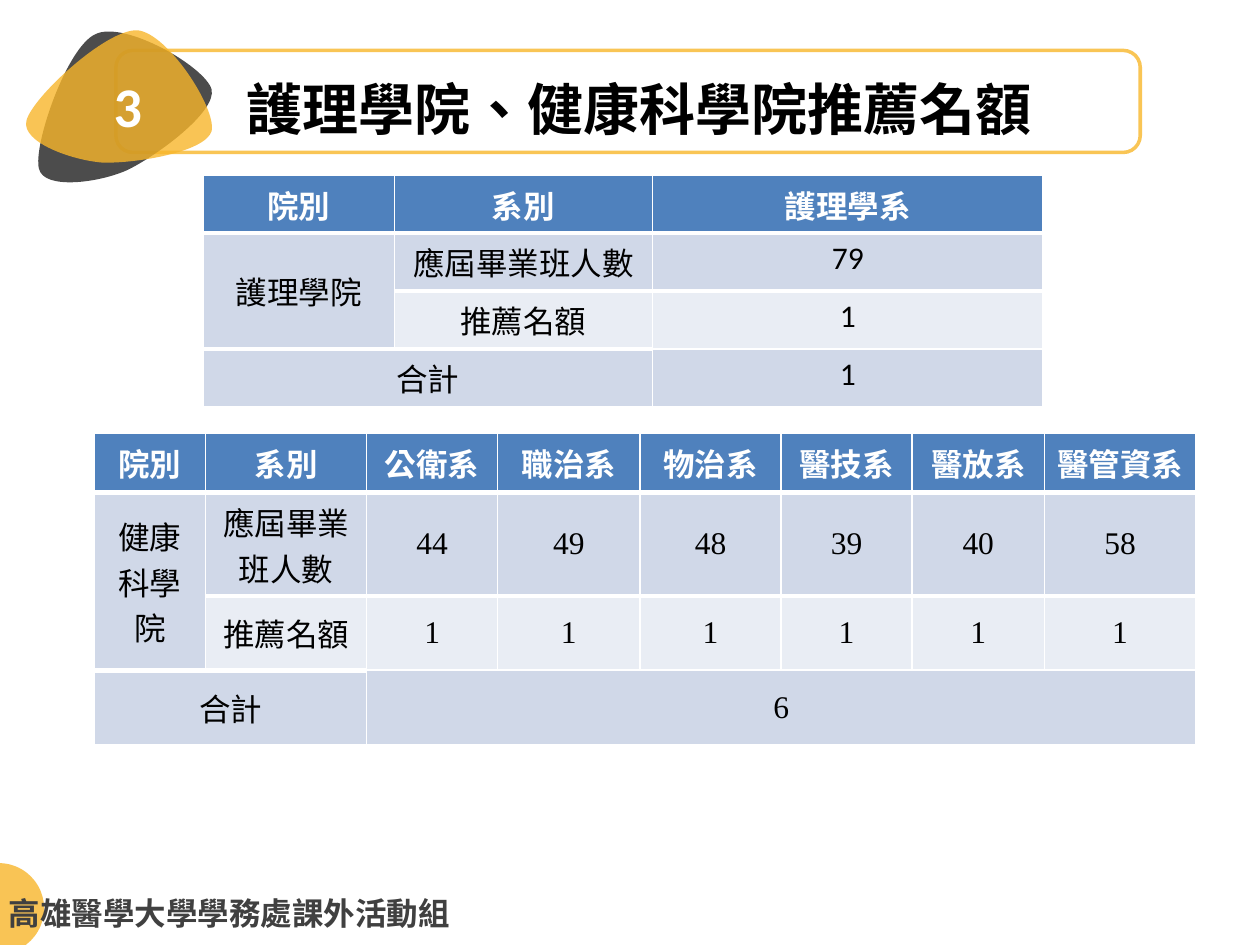
"""Build the slide on recommendation quotas for two colleges."""
from lxml import etree
from pptx import Presentation
from pptx.dml.color import RGBColor
from pptx.enum.shapes import MSO_SHAPE
from pptx.enum.text import MSO_ANCHOR, MSO_AUTO_SIZE, PP_ALIGN
from pptx.oxml import parse_xml
from pptx.oxml.ns import nsdecls, qn
from pptx.util import Inches, Pt

CENTER, LEFT = PP_ALIGN.CENTER, PP_ALIGN.LEFT
TOP, MIDDLE = MSO_ANCHOR.TOP, MSO_ANCHOR.MIDDLE
NO_FIT = MSO_AUTO_SIZE.NONE
OVAL, ROUNDED = MSO_SHAPE.OVAL, MSO_SHAPE.ROUNDED_RECTANGLE
CJK = "Noto Sans CJK SC"
AMBER = "F8B62B"
rgb = RGBColor.from_string


def write(tf, text, font, size, color, bold, align):
    tf.text = text
    p = tf.paragraphs[0]
    p.alignment = align
    p.space_before = Pt(0)
    p.font.name = font
    p.font.size = Pt(size)
    p.font.bold = bold
    p.font.color.rgb = rgb(color)
    props = p._p.pPr.find(qn("a:defRPr"))
    etree.SubElement(props, qn("a:ea")).set("typeface", font)
    run_props = p.runs[0]._r.get_or_add_rPr()
    run_props.set("lang", "zh-TW")
    run_props.set("altLang", "en-US")


def paint(s, color, opacity):
    s.shadow.inherit = False
    s.line.fill.background()
    s.fill.solid()
    s.fill.fore_color.rgb = rgb(color)
    clr = s.fill._xPr.find(".//" + qn("a:srgbClr"))
    etree.SubElement(clr, qn("a:alpha")).set("val", str(opacity * 1000))


prs = Presentation()
prs.slide_width, prs.slide_height = Inches(10), Inches(7.5)
slide = prs.slides.add_slide(prs.slide_layouts[5])
shapes = slide.shapes

frame = shapes.add_shape(ROUNDED, Inches(0.92), Inches(0.4), Inches(8.13), Inches(0.81))
frame.shadow.inherit = False
frame.fill.background()
frame.line.color.rgb = rgb("F9C555")
frame.line.width = Pt(2)

dot = shapes.add_shape(OVAL, Inches(-0.37), Inches(6.85), Inches(0.72), Inches(0.72))
paint(dot, AMBER, 80)

blobs = [
    ("000000", 70, (1.01, 1.35), [
        (1.24, 1.24, 1.72, 0.89, 1.68, 0.71), (1.63, 0.53, 0.99, 0.16, 0.76, 0.27),
        (0.53, 0.37, 0.26, 1.16, 0.31, 1.34), (0.35, 1.51, 0.79, 1.45, 1.01, 1.35)]),
    (AMBER, 80, (0.81, 1.29), [
        (1.06, 1.3, 1.63, 1.21, 1.68, 1.04), (1.72, 0.86, 1.33, 0.26, 1.09, 0.24),
        (0.84, 0.23, 0.25, 0.78, 0.21, 0.96), (0.17, 1.13, 0.57, 1.27, 0.81, 1.29)]),
]
for color, opacity, start, curves in blobs:
    builder = shapes.build_freeform(*map(Inches, start))
    builder.add_line_segments([tuple(map(Inches, curve[4:])) for curve in curves])
    blob = builder.convert_to_shape()
    for segment, curve in zip(list(blob._element.iter(qn("a:lnTo"))), curves):
        bezier = etree.Element(qn("a:cubicBezTo"))
        for x, y in zip(curve[::2], curve[1::2]):
            pt = etree.SubElement(bezier, qn("a:pt"))
            pt.set("x", str(Inches(x) - blob.left))
            pt.set("y", str(Inches(y) - blob.top))
        segment.getparent().replace(segment, bezier)
    paint(blob, color, opacity)

title = shapes.title
title.left, title.top, title.width, title.height = (
    Inches(1.86), Inches(0.54), Inches(6.92), Inches(0.59))
title.text_frame.auto_size = NO_FIT
title.text_frame.vertical_anchor = MIDDLE
title.text_frame.margin_top = Inches(0.1)
write(title.text_frame, "護理學院、健康科學院推薦名額", CJK, 32, "000000", True, LEFT)

labels = [
    ("3", "Calibri", 32, "FFFFFF", CENTER, (0.23, 0.52, 1.57, 0.74)),
    ("高雄醫學大學學務處課外活動組", CJK, 18, "404040", LEFT, (-0.03, 7.05, 3.77, 0.4)),
]
for text, font, size, color, align, box in labels:
    tf = shapes.add_textbox(*map(Inches, box)).text_frame
    tf.word_wrap = True
    write(tf, text, font, size, color, True, align)

tables = [
    ((1.61, 1.39), [1.52, 2.05, 3.1], [0.46] * 4, "Calibri", TOP,
     [((1, 0), (2, 0)), ((3, 0), (3, 1))],
     [["院別", "系別", "護理學系"],
      ["護理學院", "應屆畢業班人數", "79"],
      [None, "推薦名額", "1"],
      ["合計", None, "1"]]),
    ((0.75, 3.44), [0.88, 1.28, 1.04, 1.13, 1.12, 1.04, 1.05, 1.2],
     [0.47, 0.82, 0.59, 0.59], "Times New Roman", MIDDLE,
     [((1, 0), (2, 0)), ((3, 0), (3, 1)), ((3, 2), (3, 7))],
     [["院別", "系別", "公衛系", "職治系", "物治系", "醫技系", "醫放系", "醫管資系"],
      ["健康科學院", "應屆畢業班人數", "44", "49", "48", "39", "40", "58"],
      [None, "推薦名額"] + ["1"] * 6,
      ["合計", None, "6"] + [None] * 5]),
]
FILLS = ["4F81BD", "D0D8E8", "E9EDF4", "D0D8E8"]
HEADER_RULE = {0: "lnB", 1: "lnT"}
for (x, y), widths, heights, number_font, number_anchor, merges, rows in tables:
    table = shapes.add_table(len(rows), len(widths), Inches(x), Inches(y),
                             Inches(sum(widths)), Inches(sum(heights))).table
    for col, width in zip(table.columns, widths):
        col.width = Inches(width)
    for row, height in zip(table.rows, heights):
        row.height = Inches(height)
    for first, last in merges:
        table.cell(*first).merge(table.cell(*last))
    for r, texts in enumerate(rows):
        for c, text in enumerate(texts):
            cell = table.cell(r, c)
            cell.fill.solid()
            cell.fill.fore_color.rgb = rgb(FILLS[r])
            if r in HEADER_RULE:
                side = HEADER_RULE[r]
                cell._tc.tcPr.insert(0, parse_xml(
                    f'<a:{side} {nsdecls("a")} w="{Pt(3)}"><a:solidFill>'
                    f'<a:srgbClr val="FFFFFF"/></a:solidFill></a:{side}>'))
            if text is None:
                continue
            header, number = r == 0, text.isdigit()
            cell.vertical_anchor = TOP if header else number_anchor if number else MIDDLE
            write(cell.text_frame, text, number_font if number else CJK, 18,
                  "FFFFFF" if header else "000000", header, CENTER)

prs.save("out.pptx")
